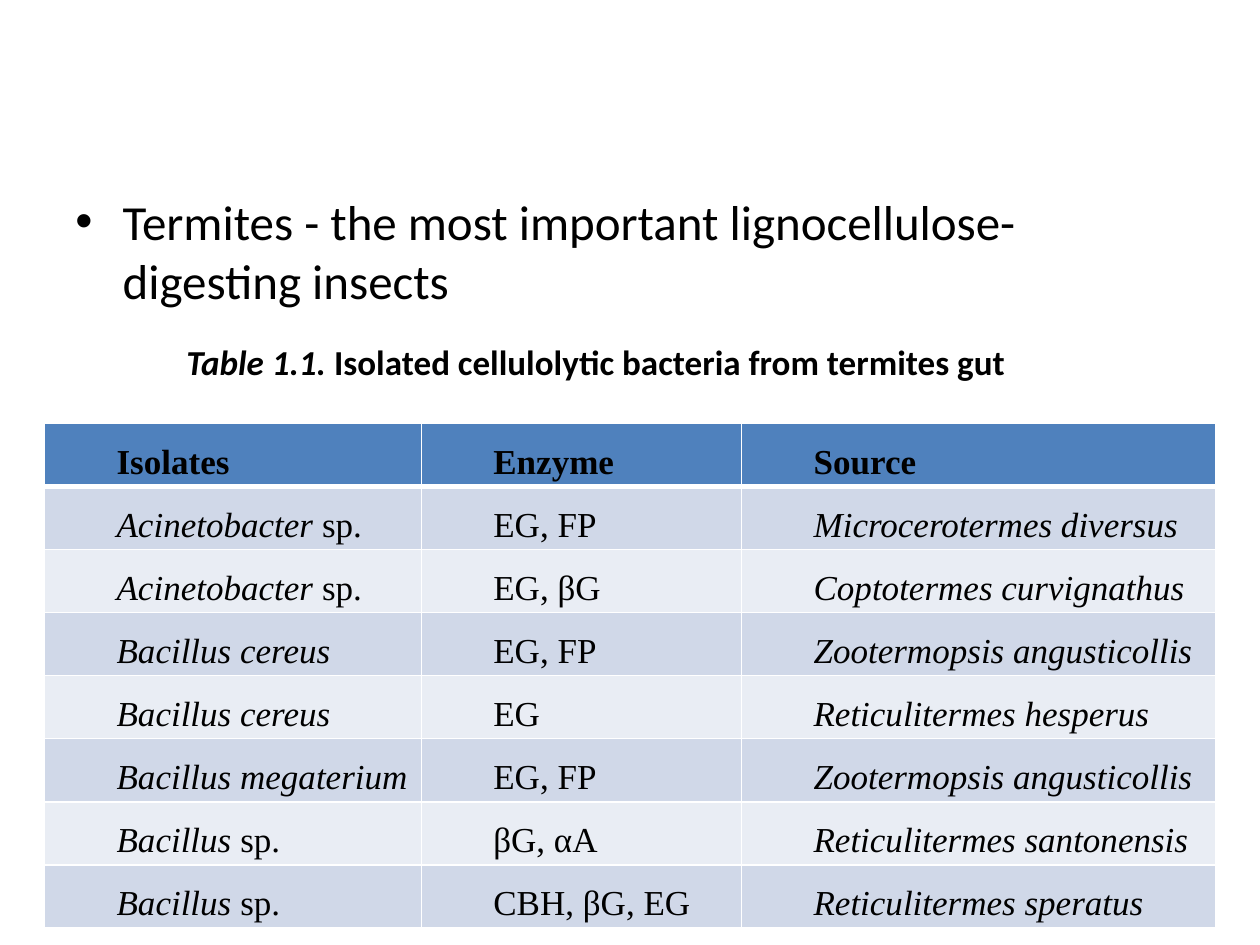
from lxml.etree import SubElement as Sub
from pptx import Presentation as Deck
from pptx.dml.color import RGBColor as Rgb
from pptx.enum.text import PP_ALIGN as Align
from pptx.oxml.ns import qn
from pptx.util import Pt


def hue(code):
    return Rgb.from_string(code)


def put(item, vals):
    for key, val in vals.items():
        setattr(item, key, val)


class Page:
    ink = "000000"
    line = "FFFFFF"
    head = "4F81BD"
    bands = ("D0D8E8", "E9EDF4")
    sans = "Calibri"
    serif = "Times New Roman"

    def __init__(self, slide):
        self.slide = slide

    def run(self, para, text, **font):
        run = para.add_run()
        run.text = text
        put(run.font, font)
        run.font.color.rgb = hue(self.ink)

    def box(self, spot, runs, hang=0):
        frame = self.slide.shapes.add_textbox(*map(Pt, spot)).text_frame
        frame.word_wrap = True
        para = frame.paragraphs[0]
        if hang:
            props = para._p.get_or_add_pPr()
            props.set("marL", str(Pt(hang)))
            props.set("indent", str(-Pt(hang)))
            Sub(props, qn("a:buFont")).set("typeface", "Arial")
            Sub(props, qn("a:buChar")).set("char", "•")
        for text, font in runs:
            self.run(para, text, name=self.sans, **font)

    def edge(self, cell, low):
        props = cell._tc.get_or_add_tcPr()
        sides = {"lnL": 1, "lnR": 1, "lnT": 1, "lnB": low}
        for spot, (tag, wide) in enumerate(sides.items()):
            side = Sub(props, qn("a:" + tag), w=str(Pt(wide)))
            fill = Sub(side, qn("a:solidFill"))
            Sub(fill, qn("a:srgbClr")).set("val", self.line)
            props.insert(spot, side)  # borders come before the fill

    def cell(self, cell, runs, fill, low=1):
        put(cell, dict(margin_left=Pt(5.14), margin_right=Pt(5.14),
                       margin_top=0, margin_bottom=0))
        cell.fill.solid()
        cell.fill.fore_color.rgb = hue(fill)
        self.edge(cell, low)
        para = cell.text_frame.paragraphs[0]
        put(para, dict(alignment=Align.JUSTIFY, line_spacing=1.5,
                       space_after=Pt(2)))
        props = para._p.get_or_add_pPr()
        props.set("marL", "0")
        props.set("indent", str(Pt(36)))
        for text, font in runs:
            self.run(para, text, name=self.serif, size=Pt(20), **font)

    def table(self, spot, cols, tall, heads, rows):
        frame = self.slide.shapes.add_table(
            len(rows) + 1, len(cols), *map(Pt, spot))
        grid = frame.table
        for col, wide in zip(grid.columns, cols):
            col.width = Pt(wide)
        for row in grid.rows:
            row.height = Pt(tall)
        for c, text in enumerate(heads):
            self.cell(grid.cell(0, c), [(text, dict(bold=True))],
                      self.head, low=3)
        for r, (name, kind, host) in enumerate(rows, 1):
            base, mark, _ = name.partition(" sp.")
            iso = [(base, dict(italic=True))]
            if mark:
                iso.append((mark, {}))
            parts = (iso, [(kind, {})], [(host, dict(italic=True))])
            for c, runs in enumerate(parts):
                self.cell(grid.cell(r, c), runs, self.bands[(r - 1) % 2])


HEADS = ("Isolates", "Enzyme", "Source")
ROWS = (
    ("Acinetobacter sp.", "EG, FP", "Microcerotermes diversus"),
    ("Acinetobacter sp.", "EG, βG", "Coptotermes curvignathus"),
    ("Bacillus cereus", "EG, FP", "Zootermopsis angusticollis"),
    ("Bacillus cereus", "EG", "Reticulitermes hesperus"),
    ("Bacillus megaterium", "EG, FP", "Zootermopsis angusticollis"),
    ("Bacillus sp.", "βG, αA", "Reticulitermes santonensis"),
    ("Bacillus sp.", "CBH, βG, EG", "Reticulitermes speratus"),
)


def main():
    deck = Deck()
    put(deck, dict(slide_width=Pt(720), slide_height=Pt(540)))
    page = Page(deck.slides.add_slide(deck.slide_layouts[6]))

    # Main point
    page.box((36, 106, 648, 376.5), [
        ("Termites - the most important lignocellulose-digesting insects",
         dict(size=Pt(28)))], hang=27)

    # Isolates by enzyme and source
    page.table((25.5, 242, 669, 236), (215.3, 183, 270.7), 29.5,
               HEADS, ROWS)

    # Table caption
    bold = dict(size=Pt(20), bold=True)
    page.box((99.4, 190.8, 555.8, 31.5), [
        ("Table 1.1. ", dict(bold, italic=True)),
        ("Isolated cellulolytic bacteria from termites gut", bold)])

    deck.save("out.pptx")


if __name__ == "__main__":
    main()
